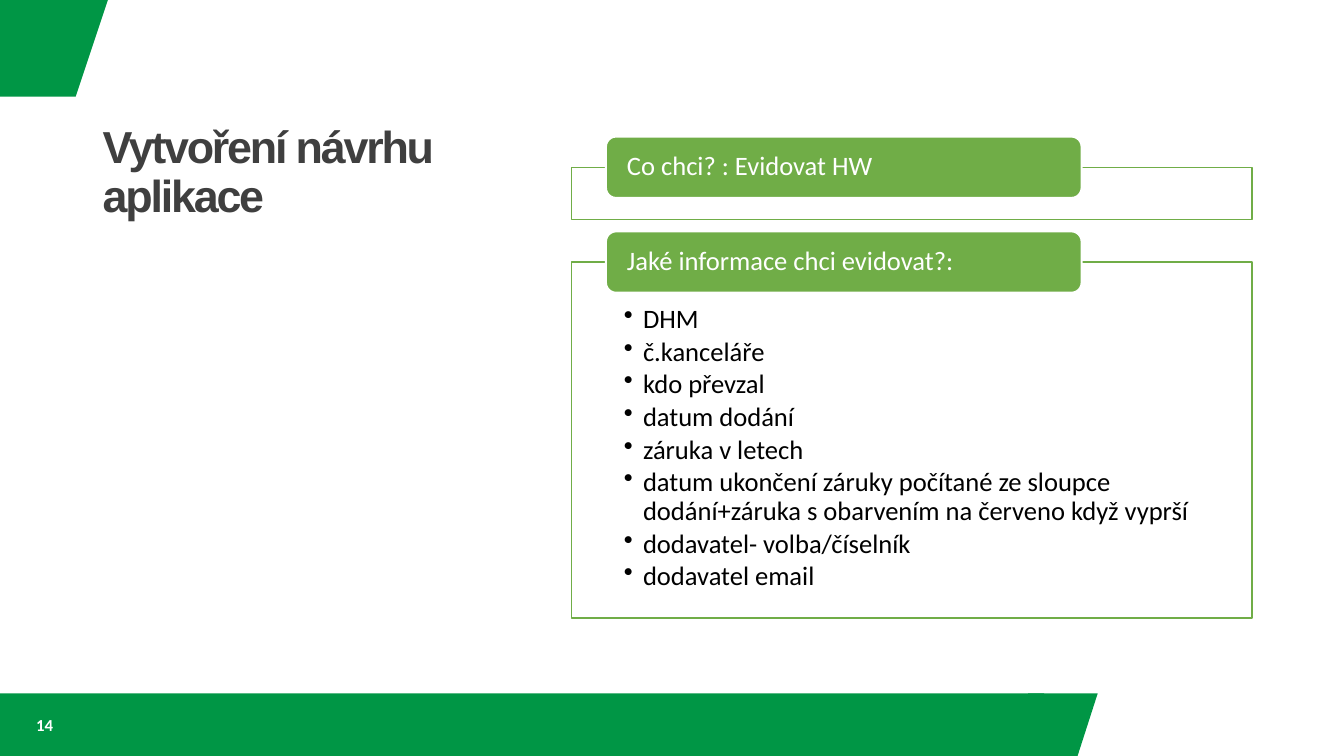
from lxml.etree import SubElement
from pptx import Presentation
from pptx.dml.color import RGBColor
from pptx.enum.shapes import MSO_SHAPE
from pptx.enum.text import MSO_ANCHOR, PP_ALIGN
from pptx.oxml.ns import qn
from pptx.util import Inches, Pt

GREEN = RGBColor(0x00, 0x96, 0x45)
LEAF = RGBColor(0x70, 0xAD, 0x47)
WHITE = RGBColor(0xFF, 0xFF, 0xFF)
BLACK = RGBColor(0x00, 0x00, 0x00)
GRAY = RGBColor(0x3F, 0x3F, 0x3F)

HEAD = {"name": "Arial", "size": Pt(32), "bold": True}
PAGE = {"name": "Calibri", "size": Pt(12), "bold": True}
BODY = {"name": "Calibri", "size": Pt(19)}

CARDS = [
    (22.13, 6.93, "Co chci? : Evidovat HW", []),
    (34.67, 47.07, "Jaké informace chci evidovat?:", [
        "DHM",
        "č.kanceláře",
        "kdo převzal",
        "datum dodání",
        "záruka v letech",
        "datum ukončení záruky počítané ze sloupce dodání+záruka s obarvením na červeno když vyprší",
        "dodavatel- volba/číselník",
        "dodavatel email",
    ]),
]


class Deck:
    """Draws styled elements, with lengths in percent of the slide's size."""

    def __init__(self):
        self.show = Presentation()
        self.show.slide_width, self.show.slide_height = Inches(13.333), Inches(7.5)
        self.slide = self.show.slides.add_slide(self.show.slide_layouts[6])

    def spot(self, x, y):
        return (round(self.show.slide_width * x / 100),
                round(self.show.slide_height * y / 100))

    def paint(self, shape, fill, line=None, width=1):
        shape.shadow.inherit = False
        shape.fill.solid()
        shape.fill.fore_color.rgb = fill
        if line is None:
            shape.line.fill.background()
        else:
            shape.line.color.rgb = line
            shape.line.width = Pt(width)
        return shape

    def block(self, kind, x, y, w, h, fill, line=None, width=1):
        shape = self.slide.shapes.add_shape(kind, *self.spot(x, y), *self.spot(w, h))
        return self.paint(shape, fill, line, width)

    def outline(self, points, fill):
        spots = [self.spot(*point) for point in points]
        form = self.slide.shapes.build_freeform(*spots[0], scale=1.0)
        form.add_line_segments(spots[1:], close=True)
        self.paint(form.convert_to_shape(), fill)

    def letter(self, shape, lines, font, color, anchor, pad=(0.1, 0.05, 0.1, 0.05),
               dot=False, gap=0, track=0, lead=0.9):
        frame = shape.text_frame
        left, top, right, base = map(Inches, pad)
        look = {"word_wrap": True, "vertical_anchor": anchor, "margin_left": left,
                "margin_top": top, "margin_right": right, "margin_bottom": base}
        for key, value in look.items():
            setattr(frame, key, value)
        for index, line in enumerate(lines):
            para = frame.paragraphs[0] if index == 0 else frame.add_paragraph()
            form = {"alignment": PP_ALIGN.LEFT, "line_spacing": lead, "space_after": Pt(gap)}
            for key, value in form.items():
                setattr(para, key, value)
            if dot:
                props = para._p.get_or_add_pPr()
                props.set("marL", str(Inches(0.19)))
                props.set("indent", str(-Inches(0.19)))
                SubElement(props, qn("a:buChar")).set("char", "•")
            run = para.add_run()
            run.text = line
            for key, value in font.items():
                setattr(run.font, key, value)
            run.font.color.rgb = color
            if track:
                run._r.get_or_add_rPr().set("spc", str(track))

    def label(self, x, y, w, h, *args, **style):
        box = self.slide.shapes.add_textbox(*self.spot(x, y), *self.spot(w, h))
        self.letter(box, *args, **style)

    def card(self, y, h, title, items):
        panel = self.block(MSO_SHAPE.RECTANGLE, 42.52, y, 50.63, h, WHITE, LEAF)
        tint = panel._element.spPr.find(".//" + qn("a:srgbClr"))
        SubElement(tint, qn("a:alpha")).set("val", "90000")
        if items:
            self.letter(panel, items, BODY, BLACK, MSO_ANCHOR.TOP,
                        pad=(0.52, 0.43, 0.52, 0.15), dot=True, gap=2.8)
        tab = self.block(MSO_SHAPE.ROUNDED_RECTANGLE, 45.08, y - 4.07, 35.4, 8.13,
                         LEAF, WHITE, 1.5)
        self.letter(tab, [title], BODY, WHITE, MSO_ANCHOR.MIDDLE, pad=(0.18, 0, 0.18, 0))


def main():
    deck = Deck()
    deck.outline([(0, 0), (8.03, 0), (5.63, 12.8), (0, 12.8)], GREEN)
    deck.outline([(76.5, 91.73), (81.68, 91.73), (80.18, 100), (76.5, 100)], GREEN)
    deck.block(MSO_SHAPE.RECTANGLE, 0, 91.73, 77.7, 8.27, GREEN)
    deck.label(6.9, 6.67, 32.25, 23.33, ["Vytvoření návrhu aplikace"], HEAD, GRAY,
               MSO_ANCHOR.BOTTOM, track=-160)
    deck.label(1.95, 93.2, 22.5, 5.33, ["14"], PAGE, WHITE, MSO_ANCHOR.MIDDLE, lead=1.0)
    for card in CARDS:
        deck.card(*card)
    deck.show.save("out.pptx")


if __name__ == "__main__":
    main()
